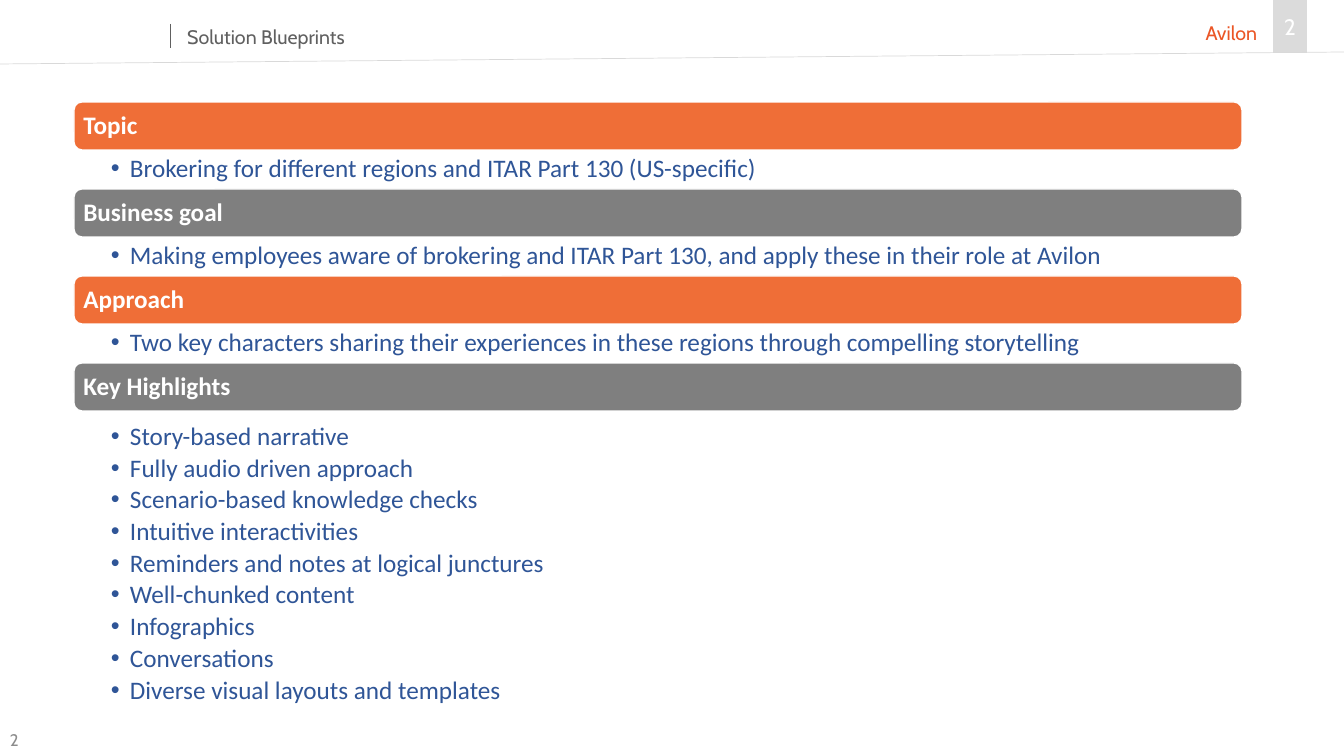
from lxml.etree import SubElement
from pptx import Presentation
from pptx.dml.color import RGBColor
from pptx.enum.shapes import MSO_CONNECTOR, MSO_SHAPE
from pptx.enum.text import MSO_ANCHOR, PP_ALIGN
from pptx.oxml.ns import qn
from pptx.util import Emu, Pt

WIDTH, HEIGHT = 1344, 756
SCALE = 12192000 / WIDTH

WHITE = RGBColor(0xFF, 0xFF, 0xFF)
ORANGE = RGBColor(0xEF, 0x6E, 0x37)
GREY = RGBColor(0x7F, 0x7F, 0x7F)
BLUE = RGBColor(0x2F, 0x55, 0x97)
CLIENT_RED = RGBColor(0xEB, 0x56, 0x26)
TITLE_GREY = RGBColor(0x60, 0x60, 0x60)
TAB_GREY = RGBColor(0xDB, 0xDB, 0xDB)
RULE_GREY = RGBColor(0xD9, 0xD9, 0xD9)
FOOTER_GREY = RGBColor(0x8C, 0x8C, 0x8C)

BAR_H, LINE_BODY_H = 48, 39
BULLET_INDENT = 19

SECTIONS = [
    ("Topic", ["Brokering for different regions and ITAR Part 130 (US-specific)"]),
    ("Business goal", ["Making employees aware of brokering and ITAR Part 130, "
                       "and apply these in their role at Avilon"]),
    ("Approach", ["Two key characters sharing their experiences in these regions "
                  "through compelling storytelling"]),
    ("Key Highlights", [
        "Story-based narrative",
        "Fully audio driven approach",
        "Scenario-based knowledge checks",
        "Intuitive interactivities",
        "Reminders and notes at logical junctures",
        "Well-chunked content",
        "Infographics",
        "Conversations",
        "Diverse visual layouts and templates",
    ]),
]


def px(n):
    return Emu(round(n * SCALE))


def place(sp, x, y, w, h):
    sp.left, sp.top, sp.width, sp.height = px(x), px(y), px(w), px(h)


def set_insets(tf, left, top, right, bottom):
    tf.margin_left, tf.margin_top = px(left), px(top)
    tf.margin_right, tf.margin_bottom = px(right), px(bottom)


def format_text(p, size, color, font="Cabin", bold=False, align=PP_ALIGN.LEFT):
    p.alignment = align
    for r in p.runs:
        r.font.name, r.font.size, r.font.bold = font, Pt(size), bold
        r.font.color.rgb = color


def add_box(s, x, y, w, h, shape=None, fill=None):
    """Add a text box, or a filled shape without shadow when a preset is given."""
    if shape is None:
        sp = s.shapes.add_textbox(px(x), px(y), px(w), px(h))
    else:
        sp = s.shapes.add_shape(shape, px(x), px(y), px(w), px(h))
        sp.shadow.inherit = False
        sp.fill.solid()
        sp.fill.fore_color.rgb = fill
        sp.line.fill.background()
    sp.text_frame.word_wrap = True
    return sp


def add_label(s, text, box, size, color, align=PP_ALIGN.LEFT, anchor=MSO_ANCHOR.TOP, **style):
    sp = add_box(s, *box, **style)
    tf = sp.text_frame
    tf.text, tf.vertical_anchor = text, anchor
    format_text(tf.paragraphs[0], size, color, align=align)


def add_rule(s, x1, y1, x2, y2, color):
    line = s.shapes.add_connector(MSO_CONNECTOR.STRAIGHT, px(x1), px(y1), px(x2), px(y2))
    line.line.color.rgb, line.line.width = color, Pt(0.5)
    SubElement(line._element.spPr, qn("a:effectLst"))


def add_header(s, x, y, w):
    add_label(s, "2", (x + w - 71, y, 34, 53), 16, WHITE, PP_ALIGN.CENTER,
              MSO_ANCHOR.MIDDLE, shape=MSO_SHAPE.RECTANGLE, fill=TAB_GREY)
    add_rule(s, x + w, y + 52, x, y + 64, RULE_GREY)
    add_rule(s, x + 170, y + 24, x + 170, y + 48, TITLE_GREY)
    title = s.shapes.title
    place(title, x + 177, y + 20, 376, 34)
    tf = title.text_frame
    tf.text, tf.vertical_anchor = "Solution Blueprints", MSO_ANCHOR.TOP
    format_text(tf.paragraphs[0], 14, TITLE_GREY)
    add_label(s, "Avilon", (x + w - 453, y + 16, 376, 34), 14, CLIENT_RED, PP_ALIGN.RIGHT)


def add_bar(s, text, x, y, w, h, fill):
    bar = add_box(s, x, y, w, h, MSO_SHAPE.ROUNDED_RECTANGLE, fill)
    bar.line.color.rgb, bar.line.width = WHITE, Pt(1)
    tf = bar.text_frame
    tf.text, tf.vertical_anchor = text, MSO_ANCHOR.MIDDLE
    set_insets(tf, 7, 0, 7, 0)
    tf.paragraphs[0].line_spacing = 0.9
    format_text(tf.paragraphs[0], 18, WHITE, "Calibri", bold=True)


def add_bullets(s, items, x, y, w, h):
    tf = add_box(s, x, y, w, h).text_frame
    tf.text, tf.vertical_anchor = "\n".join(items), MSO_ANCHOR.MIDDLE
    set_insets(tf, 37, 3, 14, 3)
    for p in tf.paragraphs:
        pPr = p._p.get_or_add_pPr()
        pPr.set("marL", str(px(BULLET_INDENT)))
        pPr.set("indent", str(-px(BULLET_INDENT)))
        SubElement(pPr, qn("a:buFont"), typeface="Arial")
        SubElement(pPr, qn("a:buChar"), char="•")
        p.line_spacing, p.space_after = 0.9, Pt(3.2)
        format_text(p, 18, BLUE, "Calibri")


def add_sections(s, x, y, w, h):
    """Stack bars with their bullets; the last bullets fill what is left of the box."""
    bottom = y + h
    for i, (heading, items) in enumerate(SECTIONS):
        add_bar(s, heading, x, y, w, BAR_H, (ORANGE, GREY)[i % 2])
        y += BAR_H
        body_h = LINE_BODY_H if i < len(SECTIONS) - 1 else bottom - y
        add_bullets(s, items, x, y, w, body_h)
        y += body_h


def main():
    prs = Presentation()
    prs.slide_width, prs.slide_height = px(WIDTH), px(HEIGHT)
    s = prs.slides.add_slide(prs.slide_layouts[5])
    add_header(s, 0, 0, WIDTH)
    add_sections(s, 74, 102, 1168, 615)
    add_label(s, "2", (0, 720, 91, 40), 12, FOOTER_GREY, anchor=MSO_ANCHOR.MIDDLE)
    prs.save("out.pptx")


if __name__ == "__main__":
    main()
